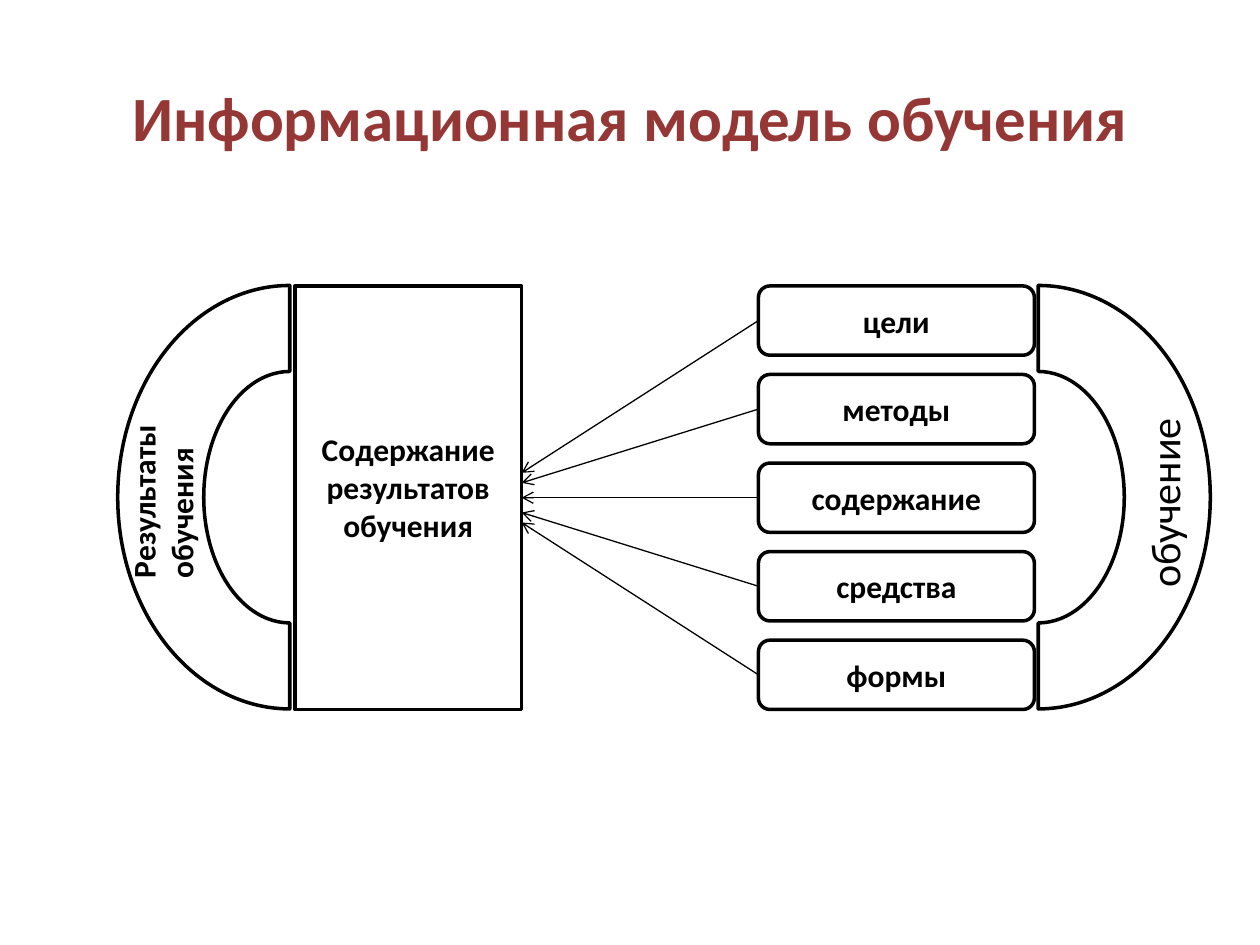
"""Build the slide on the information model of learning."""
from dataclasses import dataclass

from pptx import Presentation
from pptx.dml.color import RGBColor
from pptx.enum import shapes, text
from pptx.oxml import ns
from pptx.util import Pt
from lxml import etree


@dataclass(frozen=True)
class Theme:
    font: str = "Calibri"
    ink: str = "000000"
    paper: str = "FFFFFF"
    accent: str = "953735"
    title: int = 36
    label: int = 18
    large: int = 24


theme = Theme()
kind = shapes.MSO_SHAPE
mid = text.PP_ALIGN.CENTER


def write(frame, words, size=theme.label, color=theme.ink, bold=True, align=mid):
    frame.word_wrap = True
    para = frame.paragraphs[0]
    para.alignment = align
    run = para.add_run()
    run.text = words
    font = run.font
    font.name, font.size, font.bold = theme.font, Pt(size), bold
    font.color.rgb = RGBColor.from_string(color)


def draw(form, left, top, width, height):
    shape = slide.shapes.add_shape(form, Pt(left), Pt(top), Pt(width), Pt(height))
    shape.shadow.inherit = False
    shape.fill.solid()
    shape.fill.fore_color.rgb = RGBColor.from_string(theme.paper)
    shape.line.color.rgb = RGBColor.from_string(theme.ink)
    shape.line.width = Pt(2)
    return shape


deck = Presentation()
deck.slide_width, deck.slide_height = Pt(720), Pt(540)
slide = deck.slides.add_slide(deck.slide_layouts[5])

title = slide.shapes.title
title.left, title.top, title.width, title.height = Pt(36), Pt(21.6), Pt(648), Pt(90)
title.text_frame.vertical_anchor = text.MSO_ANCHOR.MIDDLE
write(title.text_frame, "Информационная модель обучения", size=theme.title, color=theme.accent)

top, tall = 163.4, 242
result = draw(kind.RECTANGLE, 168.5, top, 129.6, tall)
result.text_frame.margin_bottom = Pt(16)
write(result.text_frame, "Содержание результатов обучения")

names = ["цели", "методы", "содержание", "средства", "формы"]
high = 39.6
step = (tall - high) / (len(names) - 1)
boxes = []
for i, name in enumerate(names):
    box = draw(kind.ROUNDED_RECTANGLE, 433.4, top + i * step, 157.7, high)
    write(box.text_frame, name)
    boxes.append(box)

for left, turn in [(472.3, 90), (44.6, 270)]:
    arc = draw(kind.BLOCK_ARC, left, 185.8, tall, 196.6)
    arc.rotation = turn

center = top + tall / 2
for box, shift in zip(boxes, [-14.2, -8.5, 0, 8.5, 14.2]):
    arrow = slide.shapes.add_connector(
        shapes.MSO_CONNECTOR.STRAIGHT, Pt(433.4), Pt(center), Pt(298.1), Pt(center + shift))
    arrow.begin_connect(box, 1)
    if shift == 0:
        arrow.end_connect(result, 3)
    arrow.line.color.rgb = RGBColor.from_string(theme.ink)
    arrow.line.width = Pt(0.75)
    etree.SubElement(arrow.line._get_or_add_ln(), ns.qn("a:tailEnd"), type="arrow")
    etree.SubElement(arrow._element.spPr, ns.qn("a:effectLst"))

sides = [
    ("обучение", 589, 249.1, 151.9, 36, theme.large, False),
    ("Результаты обучения", 17.3, 236.2, 151.2, 51.1, theme.label, True),
]
for words, left, high, width, height, size, bold in sides:
    side = slide.shapes.add_textbox(Pt(left), Pt(high), Pt(width), Pt(height))
    side.rotation = 270
    write(side.text_frame, words, size=size, bold=bold, align=text.PP_ALIGN.LEFT)

deck.save("out.pptx")
